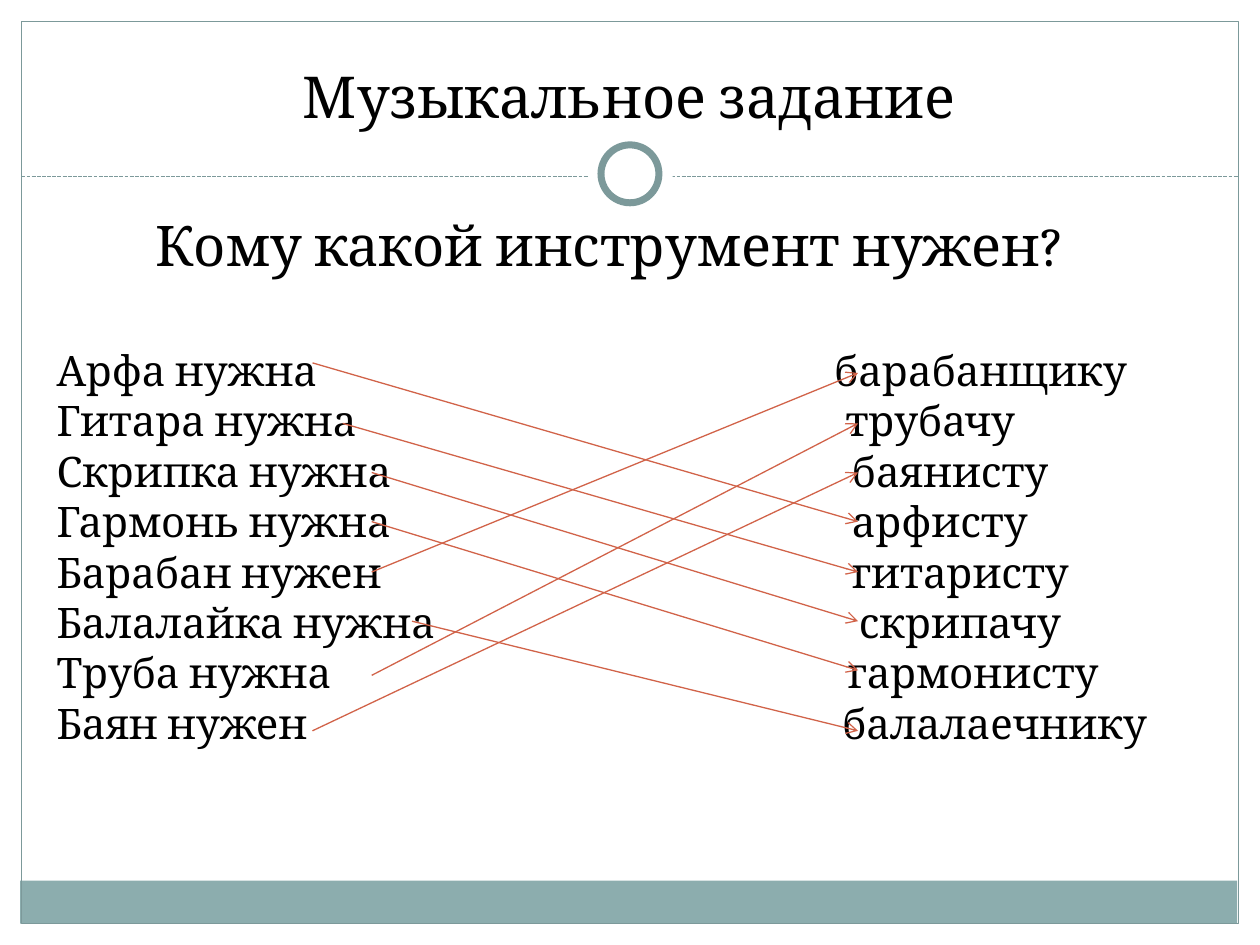
from dataclasses import dataclass

import lxml.etree
import pptx
import pptx.dml.color
import pptx.enum.dml
import pptx.enum.shapes
import pptx.enum.text
import pptx.oxml.ns
import pptx.util

Pt = pptx.util.Pt
RGB = pptx.dml.color.RGBColor
Shape = pptx.enum.shapes.MSO_SHAPE
Align = pptx.enum.text.PP_ALIGN
qn = pptx.oxml.ns.qn


@dataclass(frozen=True)
class Theme:
    font: str = "Cambria"
    text: RGB = RGB(0, 0, 0)
    paper: RGB = RGB(255, 255, 255)
    band: RGB = RGB(0x8C, 0xAD, 0xAE)
    frame: RGB = RGB(0x7C, 0x99, 0x9A)
    arrow: RGB = RGB(0xD1, 0x63, 0x49)
    title_size: float = 33
    question_size: float = 32
    pair_size: float = 24
    thin: float = 0.75
    ring: float = 4


@dataclass(frozen=True)
class Row:
    """One line of the task: its two words, and the row the arrow leads to."""
    instrument: str
    player: str
    player_tab: float
    answer_row: int
    arrow_x: float
    arrow_y: float
    tip_y: float


THEME = Theme()
TIP_X = 490.32
ROWS = [
    Row("Арфа нужна", "барабанщику", 444.5, 3, 178.56, 207.36, 213.12),
    Row("Гитара нужна", "трубачу", 451, 4, 195.84, 241.92, 241.92),
    Row("Скрипка нужна", "баянисту", 454.5, 5, 212.4, 270, 270),
    Row("Гармонь нужна", "арфисту", 454.5, 6, 212.4, 298.08, 298.08),
    Row("Барабан нужен", "гитаристу", 454.5, 0, 212.4, 326.88, 326.88),
    Row("Балалайка нужна", "скрипачу", 458.5, 7, 235.44, 354.96, 354.96),
    Row("Труба нужна", "гармонисту", 452, 1, 212.4, 385.92, 383.04),
    Row("Баян нужен", "балалаечнику", 449, 2, 178.56, 417.6, 417.6),
]


def add_figure(slide, kind, left: float, top: float, width: float, height: float,
               fill: RGB | None = None, line_width: float = 0):
    figure = slide.shapes.add_shape(kind, Pt(left), Pt(top), Pt(width), Pt(height))
    figure.shadow.inherit = False
    if fill is None:
        figure.fill.background()
    else:
        figure.fill.solid()
        figure.fill.fore_color.rgb = fill
    if line_width:
        figure.line.color.rgb = THEME.frame
        figure.line.width = Pt(line_width)
    else:
        figure.line.fill.background()


def add_line(slide, x1: float, y1: float, x2: float, y2: float, color: RGB):
    line = slide.shapes.add_connector(
        pptx.enum.shapes.MSO_CONNECTOR.STRAIGHT, Pt(x1), Pt(y1), Pt(x2), Pt(y2))
    line.line.color.rgb = color
    line.line.width = Pt(THEME.thin)
    lxml.etree.SubElement(line._element.spPr, qn("a:effectLst"))
    return line


def add_arrow(slide, start: Row, target: Row):
    arrow = add_line(slide, start.arrow_x, start.arrow_y, TIP_X, target.tip_y, THEME.arrow)
    lxml.etree.SubElement(arrow.line._get_or_add_ln(), qn("a:tailEnd"), type="arrow")


def add_text_frame(slide, left: float, top: float, width: float, height: float):
    frame = slide.shapes.add_textbox(Pt(left), Pt(top), Pt(width), Pt(height)).text_frame
    frame.word_wrap = True
    return frame


def write(paragraph, text: str, size: float, align=Align.LEFT):
    paragraph.text = text
    paragraph.alignment = align
    for run in paragraph.runs:
        run.font.name = THEME.font
        run.font.size = Pt(size)
        run.font.color.rgb = THEME.text


def set_tab(paragraph, position: float):
    tabs = lxml.etree.SubElement(paragraph._p.get_or_add_pPr(), qn("a:tabLst"))
    lxml.etree.SubElement(tabs, qn("a:tab"), pos=str(int(Pt(position))), algn="l")


def draw_background(slide):
    add_figure(slide, Shape.RECTANGLE, 11.52, 503.28, 695.52, 24.48, THEME.band)
    add_figure(slide, Shape.RECTANGLE, 12.24, 12.24, 695.52, 515.52, line_width=THEME.thin)
    divider = add_line(slide, 12.24, 100.8, 707.76, 100.8, THEME.frame)
    divider.line.dash_style = pptx.enum.dml.MSO_LINE.SQUARE_DOT
    add_figure(slide, Shape.OVAL, 336.24, 75.6, 48.24, 48.24, THEME.paper)
    add_figure(slide, Shape.OVAL, 343.44, 82.8, 33.12, 33.12, THEME.paper, THEME.ring)


def draw_task(slide):
    title = add_text_frame(slide, 23.76, 18, 671.76, 59.76)
    title.vertical_anchor = pptx.enum.text.MSO_ANCHOR.BOTTOM
    write(title.paragraphs[0], "Музыкальное задание", THEME.title_size, Align.CENTER)

    task = add_text_frame(slide, 25.2, 116.64, 646.56, 346.32)
    question = task.paragraphs[0]
    write(question, "Кому какой инструмент нужен?", THEME.question_size, Align.CENTER)
    question.space_after = Pt(38.3)
    for row in ROWS:
        pair = task.add_paragraph()
        write(pair, f"{row.instrument}\t{row.player}", THEME.pair_size)
        set_tab(pair, row.player_tab)
    for row in ROWS:
        add_arrow(slide, row, ROWS[row.answer_row])


def main():
    deck = pptx.Presentation()
    deck.slide_width, deck.slide_height = Pt(720), Pt(540)
    slide = deck.slides.add_slide(deck.slide_layouts[6])
    draw_background(slide)
    draw_task(slide)
    deck.save("out.pptx")


if __name__ == "__main__":
    main()
